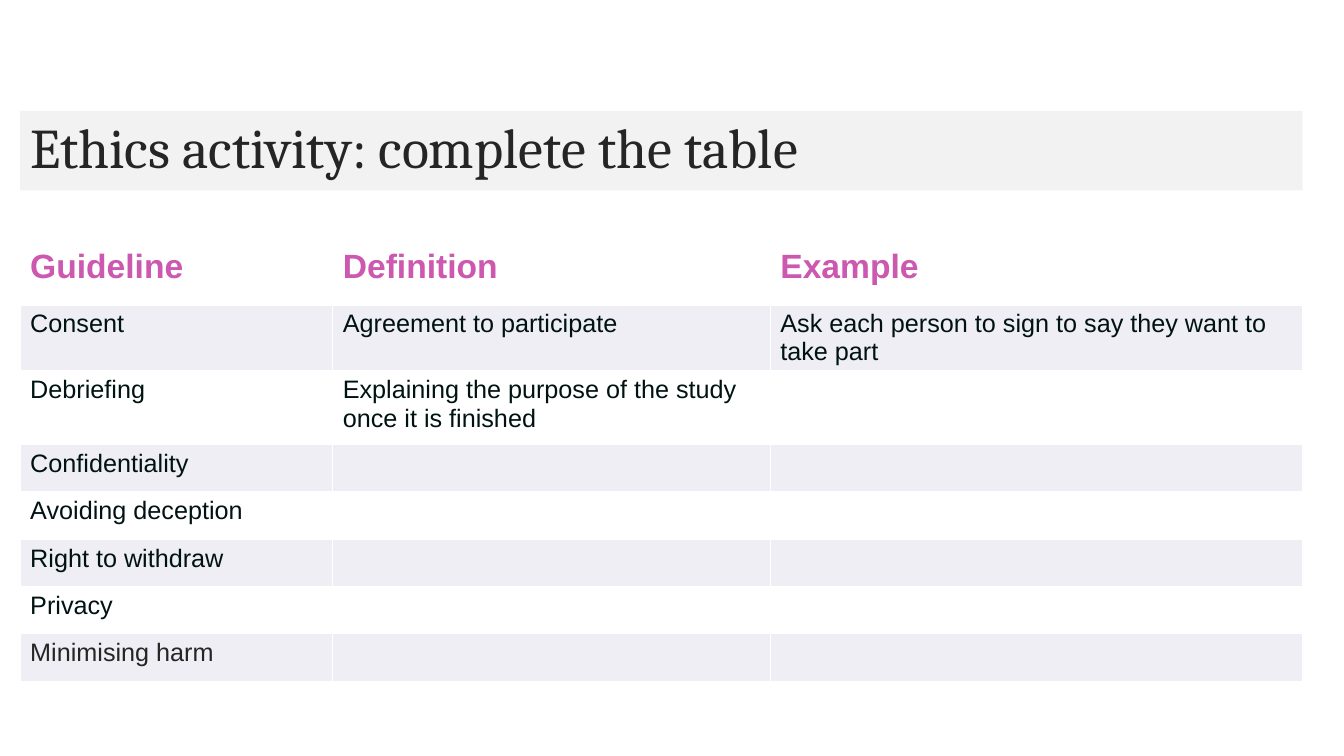
from dataclasses import dataclass

from lxml import etree
from pptx import Presentation
from pptx import util as u
from pptx.dml.color import RGBColor
from pptx.enum import text
from pptx.oxml import ns
from pptx.slide import Slide
from pptx.table import Table, _Cell

WHITE = RGBColor(0xFF, 0xFF, 0xFF)
TITLE_BAND = RGBColor(0xF2, 0xF2, 0xF2)
ROW_BAND = RGBColor(0xEE, 0xEE, 0xF4)
CHARCOAL = RGBColor(0x25, 0x25, 0x25)
INK = RGBColor(0x00, 0x13, 0x12)
PINK = RGBColor(0xCC, 0x58, 0xB0)

GRID_STEP = u.Inches(0.1)
LEFT, WIDTH = 2, 127.2
TITLE_TOP, TITLE_HEIGHT = 11, 7.9
TABLE_TOP = 24.1
COLUMN_SPANS = (31, 43.4, 52.8)


@dataclass(frozen=True)
class Guideline:
    name: str
    definition: str = ""
    example: str = ""
    rows: float = 4.7
    color: RGBColor = INK
    size: int = 18
    bold: bool = False
    rule: float = 1


GUIDELINES = (
    Guideline("Guideline", "Definition", "Example", 6.1, PINK, 24, True, 3),
    Guideline("Consent", "Agreement to participate",
              "Ask each person to sign to say they want to take part", 6.4),
    Guideline("Debriefing", "Explaining the purpose of the study once it is finished",
              rows=7.3),
    Guideline("Confidentiality"),
    Guideline("Avoiding deception"),
    Guideline("Right to withdraw"),
    Guideline("Privacy"),
    Guideline("Minimising harm", color=CHARCOAL),
)


def grid(steps: float) -> u.Emu:
    return u.Emu(round(steps * GRID_STEP))


def add_border(cell: _Cell, side: str, points: float) -> None:
    properties = cell._tc.get_or_add_tcPr()
    line = etree.SubElement(properties, ns.qn(f"a:ln{side}"), w=str(u.Pt(points)))
    fill = etree.SubElement(line, ns.qn("a:solidFill"))
    etree.SubElement(fill, ns.qn("a:srgbClr"), val=str(WHITE))


def style_text(frame: text, name: str, size: int, color: RGBColor, bold: bool) -> None:
    for paragraph in frame.paragraphs:
        for span in paragraph.runs:
            span.font.name = name
            span.font.size = u.Pt(size)
            span.font.bold = bold
            span.font.color.rgb = color


def add_title(page: Slide) -> None:
    box = page.shapes.title
    box.left, box.top = grid(LEFT), grid(TITLE_TOP)
    box.width, box.height = grid(WIDTH), grid(TITLE_HEIGHT)
    box.fill.solid()
    box.fill.fore_color.rgb = TITLE_BAND
    frame = box.text_frame
    frame.text = "Ethics activity: complete the table"
    frame.auto_size = text.MSO_AUTO_SIZE.NONE
    frame.vertical_anchor = text.MSO_ANCHOR.MIDDLE
    frame.paragraphs[0].alignment = text.PP_ALIGN.LEFT
    frame.paragraphs[0].line_spacing = 0.9
    style_text(frame, "Cambria", 40, CHARCOAL, False)


def fill_row(table: Table, index: int, guideline: Guideline) -> None:
    table.rows[index].height = grid(guideline.rows)
    top_rule = GUIDELINES[max(index - 1, 0)].rule if index else 1
    borders = {"L": 1, "R": 1, "T": top_rule, "B": guideline.rule}
    words = (guideline.name, guideline.definition, guideline.example)
    for column, wording in enumerate(words):
        cell = table.cell(index, column)
        for side, points in borders.items():
            add_border(cell, side, points)
        cell.fill.solid()
        cell.fill.fore_color.rgb = ROW_BAND if index % 2 else WHITE
        if wording:
            cell.text_frame.text = wording
            style_text(cell.text_frame, "Arial", guideline.size,
                       guideline.color, guideline.bold)


def add_guideline_table(page: Slide) -> None:
    height = sum(guideline.rows for guideline in GUIDELINES)
    table = page.shapes.add_table(
        len(GUIDELINES), len(COLUMN_SPANS),
        grid(LEFT), grid(TABLE_TOP), grid(WIDTH), grid(height),
    ).table
    for column, span in zip(table.columns, COLUMN_SPANS):
        column.width = grid(span)
    for index, guideline in enumerate(GUIDELINES):
        fill_row(table, index, guideline)


def main() -> None:
    deck = Presentation()
    deck.slide_width, deck.slide_height = u.Inches(13.33), u.Inches(7.5)
    page = deck.slides.add_slide(deck.slide_layouts.get_by_name("Title Only"))
    add_title(page)
    add_guideline_table(page)
    deck.save("out.pptx")


if __name__ == "__main__":
    main()
